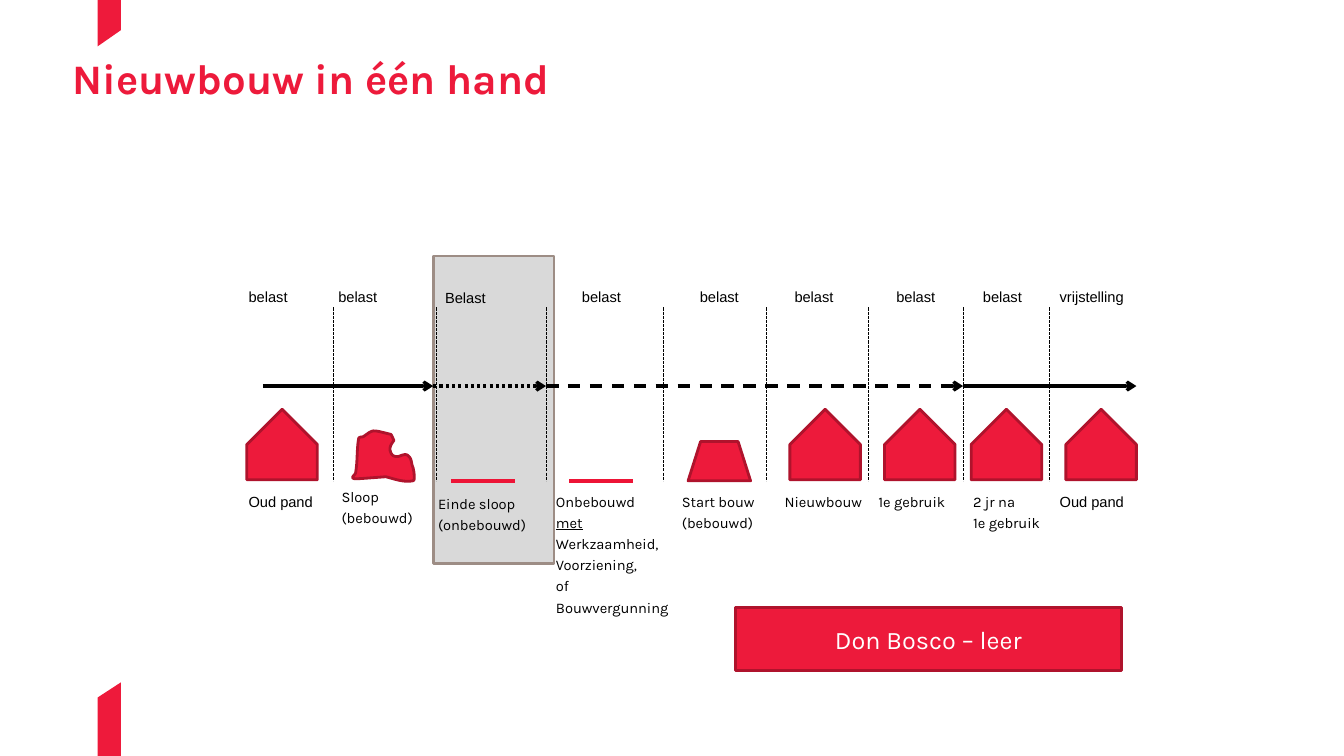
from dataclasses import dataclass

from pptx import Presentation
from pptx.dml.color import RGBColor
from pptx.enum.dml import MSO_LINE
from pptx.enum.shapes import MSO_CONNECTOR, MSO_SHAPE
from pptx.enum.text import MSO_ANCHOR, MSO_AUTO_SIZE, PP_ALIGN
from pptx.oxml.ns import qn
from pptx.util import Inches, Pt

LEFT, CENTER = PP_ALIGN.LEFT, PP_ALIGN.CENTER
TOP, MIDDLE = MSO_ANCHOR.TOP, MSO_ANCHOR.MIDDLE
FIT, FIXED = MSO_AUTO_SIZE.SHAPE_TO_FIT_TEXT, MSO_AUTO_SIZE.NONE
SOLID, DASH = MSO_LINE.SOLID, MSO_LINE.DASH
DOTS, TICKS = MSO_LINE.ROUND_DOT, MSO_LINE.SQUARE_DOT
STRAIGHT = MSO_CONNECTOR.STRAIGHT
RECT, HOUSE = MSO_SHAPE.RECTANGLE, MSO_SHAPE.PENTAGON
BASE = MSO_SHAPE.FLOWCHART_MANUAL_OPERATION


@dataclass(frozen=True)
class Theme:
    red: str = "ED1A3B"
    mark: str = "EE1A3B"
    ground: str = "ED1436"
    edge: str = "AF132C"
    gray: str = "D9D9D9"
    taupe: str = "9D8D85"
    black: str = "000000"
    white: str = "FFFFFF"
    font: str = "Karla"
    plain: str = "Arial"
    title: float = 30
    box: float = 18
    label: float = 10.5


def assign(target, values):
    for name, value in values.items():
        setattr(target, name, value)


def curve(start, steps, count=8):
    """Turn cubic Bezier steps into a list of points."""
    points = [start]
    for a, b, c, d, x, y in steps:
        p, q = points[-1]
        for i in range(1, count + 1):
            t = i / count
            u = 1 - t
            k = (u ** 3, 3 * u * u * t, 3 * u * t * t, t ** 3)
            points.append((k[0] * p + k[1] * a + k[2] * c + k[3] * x,
                           k[0] * q + k[1] * b + k[2] * d + k[3] * y))
    return points


class Canvas:
    def __init__(self, slide, theme):
        self.slide, self.theme = slide, theme

    def paint(self, shape, fill, edge=None):
        shape.shadow.inherit = False
        shape.fill.solid()
        shape.fill.fore_color.rgb = RGBColor.from_string(fill)
        if edge:
            shape.line.color.rgb = RGBColor.from_string(edge)
            shape.line.width = Pt(2)
        else:
            shape.line.fill.background()

    def text(self, frame, lines, size, color, font=None, align=LEFT,
             bold=False, gap=0, hang=0, under=()):
        for i, line in enumerate(lines):
            para = frame.paragraphs[0] if i == 0 else frame.add_paragraph()
            assign(para, {"alignment": align, "space_before": Pt(gap)})
            if hang:
                props = para._p.get_or_add_pPr()
                props.set("marL", str(Inches(hang)))
                props.set("indent", str(-Inches(hang)))
            run = para.add_run()
            run.text = line
            assign(run.font, {"name": font or self.theme.font, "size": Pt(size),
                              "bold": bold, "underline": line in under})
            run.font.color.rgb = RGBColor.from_string(color)

    def title(self, words, *place):
        shape = self.slide.shapes.title
        assign(shape, dict(zip(("left", "top", "width", "height"), map(Inches, place))))
        frame = shape.text_frame
        assign(frame, {"margin_left": 0, "margin_right": 0, "margin_top": 0,
                       "margin_bottom": 0, "vertical_anchor": TOP,
                       "word_wrap": True, "auto_size": FIXED})
        self.text(frame, [words], self.theme.title, self.theme.red, bold=True)

    def label(self, lines, *place, pad=None, **style):
        frame = self.slide.shapes.add_textbox(*map(Inches, place)).text_frame
        assign(frame, {"word_wrap": True, "auto_size": FIT})
        if pad is not None:
            sides = ("margin_left", "margin_right", "margin_top", "margin_bottom")
            assign(frame, dict.fromkeys(sides, Inches(pad)))
        self.text(frame, lines, self.theme.label, self.theme.black, **style)

    def shape(self, kind, place, fill, edge, turn=0):
        shape = self.slide.shapes.add_shape(kind, *map(Inches, place))
        shape.rotation = turn
        self.paint(shape, fill, edge)
        return shape

    def outline(self, points, fill, edge=None):
        spots = [(Inches(x), Inches(y)) for x, y in points]
        form = self.slide.shapes.build_freeform(*spots[0])
        form.add_line_segments(spots[1:], close=True)
        self.paint(form.convert_to_shape(), fill, edge)

    def line(self, start, end, color, width, dash=SOLID, arrow=False):
        link = self.slide.shapes.add_connector(
            STRAIGHT, *map(Inches, (*start, *end)))
        link.line.color.rgb = RGBColor.from_string(color)
        assign(link.line, {"width": Pt(width), "dash_style": dash})
        props = link._element.spPr
        if arrow:
            ln = props.find(qn("a:ln"))
            ln.append(ln.makeelement(qn("a:tailEnd"), {"type": "arrow"}))
        props.append(props.makeelement(qn("a:effectLst"), {}))


def main():
    deck = Presentation()
    deck.slide_width, deck.slide_height = Inches(13.34), Inches(7.5)
    theme = Theme()
    page = Canvas(deck.slides.add_slide(deck.slide_layouts[5]), theme)

    page.outline([(1.2, 6.77), (1.2, 7.5), (0.97, 7.5), (0.97, 6.92)], theme.mark)
    page.outline([(0.97, 0), (1.2, 0), (1.2, 0.3), (0.97, 0.46)], theme.mark)
    page.title("Nieuwbouw in één hand", 0.72, 0.52, 11.89, 0.58)

    page.shape(RECT, (4.3, 2.54, 1.2, 3.05), theme.gray, theme.taupe)
    box = page.shape(RECT, (7.3, 6.03, 3.83, 0.62), theme.red, theme.edge)
    box.text_frame.vertical_anchor = MIDDLE
    page.text(box.text_frame, ["Don Bosco – leer"], theme.box, theme.white,
              align=CENTER)

    for x in (3.31, 4.33, 5.42, 6.59, 7.61, 8.62, 9.56, 10.42):
        page.line((x, 3.05), (x, 4.77), theme.black, 0.75, TICKS)
    for x in (4.48, 5.65):
        page.line((x, 4.77), (x + 0.63, 4.77), theme.ground, 3)
    for x in (2.45, 7.84, 8.78, 9.64, 10.58):
        page.shape(HOUSE, (x, 4.06, 0.7, 0.7), theme.red, theme.edge, 270)
    page.shape(BASE, (6.83, 4.38, 0.62, 0.39), theme.red, theme.edge, 180)

    ruin = curve((3.52, 4.75), [
        (3.47, 4.74, 3.53, 4.71, 3.53, 4.69), (3.55, 4.58, 3.54, 4.46, 3.56, 4.35),
        (3.57, 4.33, 3.59, 4.34, 3.61, 4.33), (3.71, 4.26, 3.68, 4.26, 3.88, 4.31),
        (3.89, 4.32, 3.9, 4.35, 3.91, 4.37), (3.88, 4.41, 3.85, 4.45, 3.89, 4.51),
        (3.91, 4.53, 3.93, 4.53, 3.95, 4.53), (3.99, 4.52, 4.03, 4.49, 4.06, 4.53),
        (4.09, 4.56, 4.08, 4.6, 4.1, 4.64), (4.1, 4.64, 4.11, 4.69, 4.11, 4.69),
        (4.11, 4.72, 4.12, 4.76, 4.1, 4.77), (4.01, 4.79, 3.91, 4.75, 3.83, 4.73),
        (3.55, 4.75, 3.57, 4.75, 3.52, 4.75)])
    page.outline(ruin, theme.red, theme.edge)

    for x, end, dash in ((2.61, 4.3, SOLID), (5.42, 9.56, DASH),
                         (9.56, 11.28, SOLID), (4.3, 5.42, DOTS)):
        page.line((x, 3.83), (end, 3.83), theme.black, 2.25, dash, True)

    for words, x, y, width, align in (
            ("belast", 2.37, 2.81, 0.94, LEFT), ("belast", 3.26, 2.81, 1.17, LEFT),
            ("Belast", 4.32, 2.82, 1.17, LEFT), ("belast", 5.5, 2.81, 0.94, CENTER),
            ("belast", 6.67, 2.81, 0.94, CENTER), ("belast", 7.61, 2.81, 0.94, CENTER),
            ("belast", 8.62, 2.81, 0.94, CENTER), ("belast", 9.48, 2.81, 0.94, CENTER),
            ("vrijstelling", 10.42, 2.81, 0.94, LEFT),
            ("Oud pand", 2.37, 4.84, 0.94, LEFT),
            ("Oud pand", 10.42, 4.84, 0.94, LEFT)):
        page.label([words], x, y, width, 0.28, font=theme.plain, align=align)

    for lines, x, y, width, height, pad in (
            (("Sloop", "(bebouwd)"), 3.39, 4.84, 0.91, 0.39, 0),
            (("Einde sloop", "(onbebouwd)"), 4.25, 4.86, 1.17, 0.7, None),
            (("Onbebouwd", "met", "Werkzaamheid,", "Voorziening,", "of",
              "Bouwvergunning"), 5.42, 4.84, 1.41, 1.34, None),
            (("Start bouw", "(bebouwd)"), 6.67, 4.84, 1.02, 0.49, None),
            (("Nieuwbouw",), 7.69, 4.84, 1.02, 0.28, None),
            (("1e gebruik",), 8.62, 4.84, 0.94, 0.28, None),
            (("2 jr na", "1e gebruik"), 9.56, 4.84, 0.94, 0.49, None)):
        page.label(lines, x, y, width, height, pad=pad, gap=2.5, hang=0.38,
                   under=("met",))

    deck.save("out.pptx")


if __name__ == "__main__":
    main()
